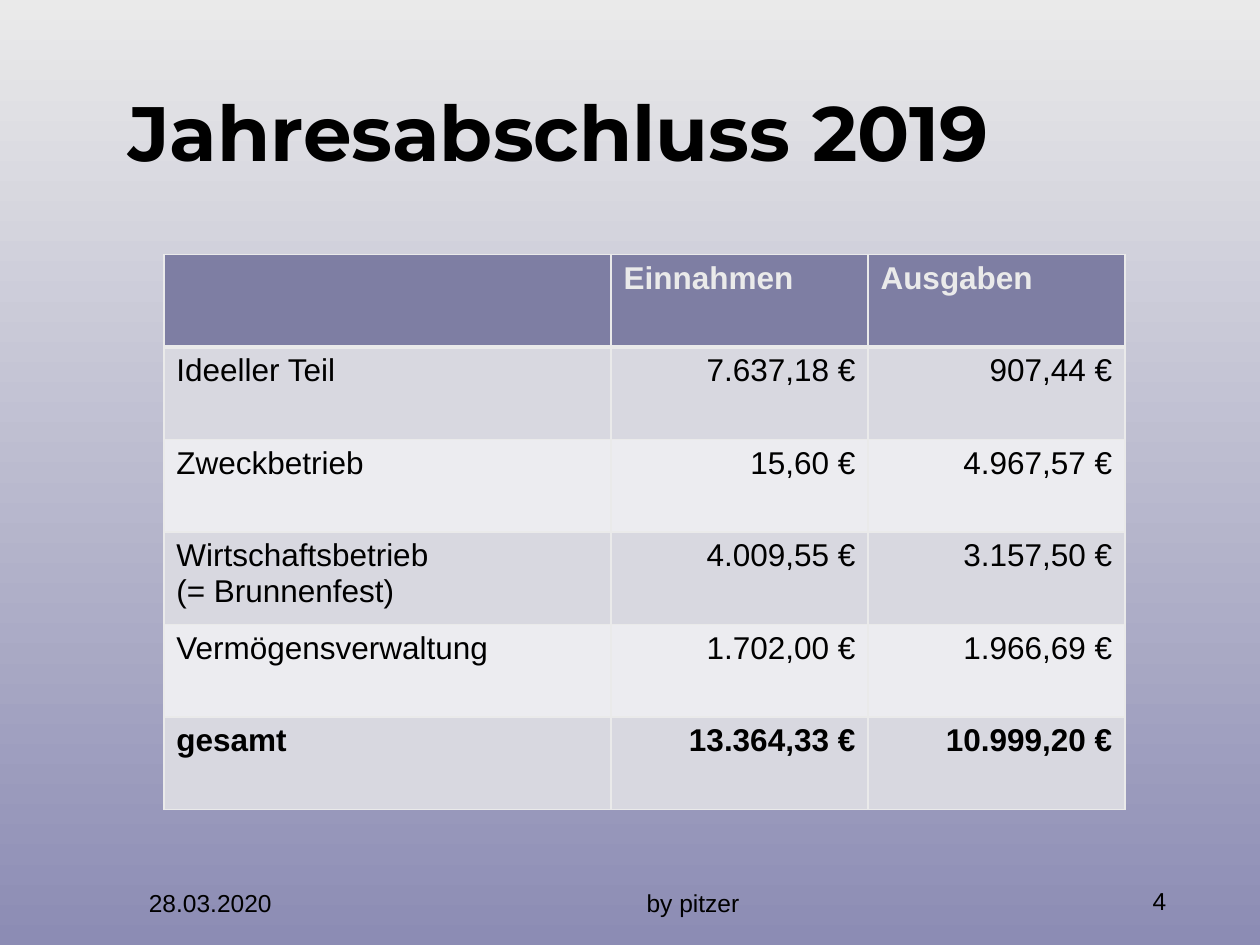
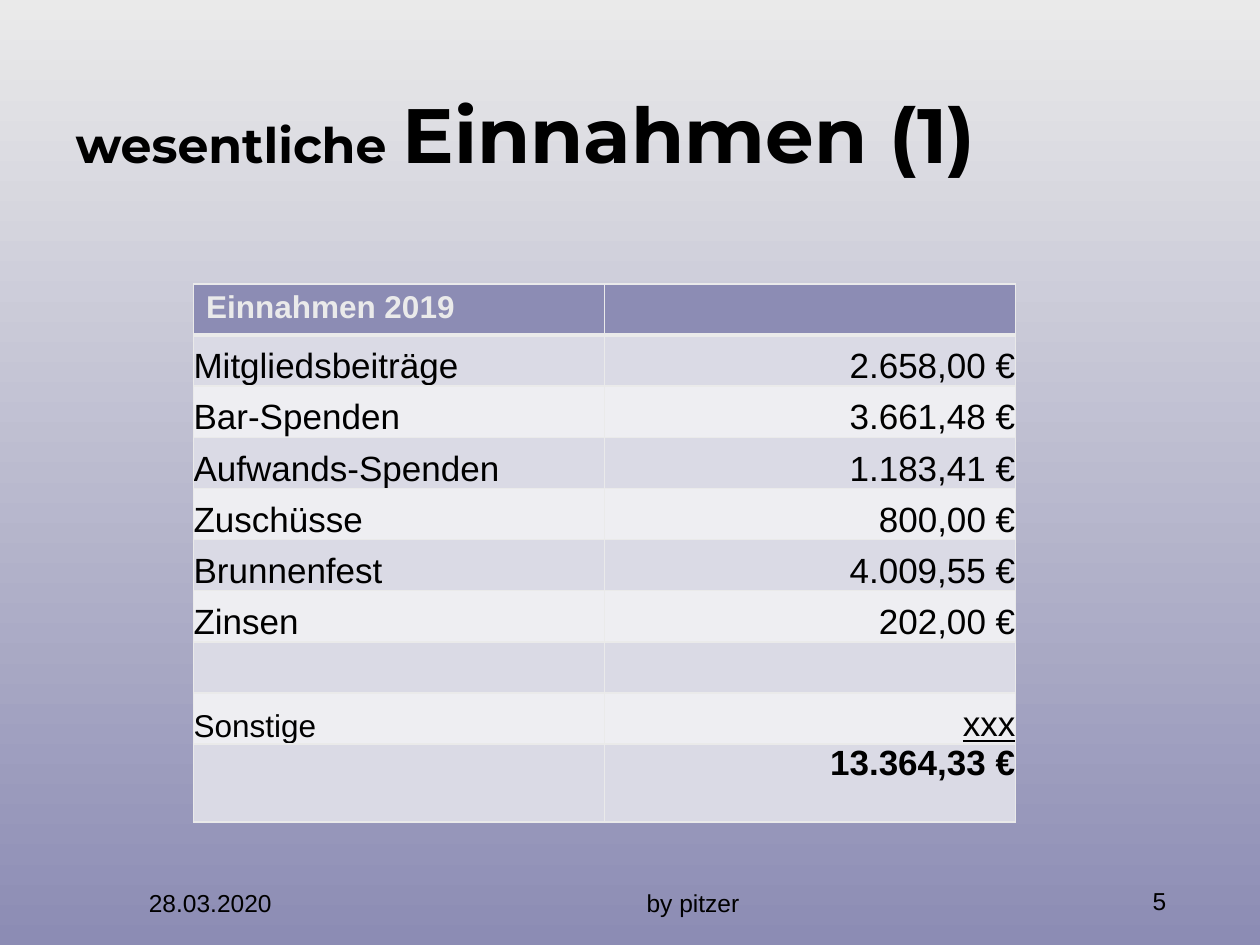
from lxml import etree
from pptx import Presentation
from pptx.dml.color import RGBColor as RGB
from pptx.enum.text import MSO_ANCHOR as Anchor, MSO_AUTO_SIZE as Fit, PP_ALIGN as Align
from pptx.oxml.ns import qn
from pptx.util import Pt

BLACK = RGB(0x00, 0x00, 0x00)
PALE = RGB(0xEA, 0xEA, 0xEA)
LILAC = RGB(0x8C, 0x8C, 0xB4)
PLUM = RGB(0x7E, 0x7E, 0xA3)
GREYS = RGB(0xD8, 0xD8, 0xE0), RGB(0xEC, 0xEC, 0xF0)
TINTS = RGB(0xDA, 0xDA, 0xE5), RGB(0xEE, 0xEE, 0xF2)

RESULT = [
    ("", "Einnahmen", "Ausgaben"),
    ("Ideeller Teil", "7.637,18 €", "907,44 €"),
    ("Zweckbetrieb", "15,60 €", "4.967,57 €"),
    ("Wirtschaftsbetrieb \v(= Brunnenfest)", "4.009,55 €", "3.157,50 €"),
    ("Vermögensverwaltung", "1.702,00 €", "1.966,69 €"),
    ("gesamt", "13.364,33 €", "10.999,20 €"),
]
INCOME = [
    ("Einnahmen 2019", ""),
    ("Mitgliedsbeiträge", "2.658,00 €"),
    ("Bar-Spenden", "3.661,48 €"),
    ("Aufwands-Spenden", "1.183,41 €"),
    ("Zuschüsse", "800,00 €"),
    ("Brunnenfest", "4.009,55 €"),
    ("Zinsen", "202,00 €"),
    ("", ""),
    ("Sonstige", "xxx"),
    ("", "13.364,33 €"),
]


def edge(cell, side, width):
    """Draw one border of a cell; side is L, R, T or B."""
    line = etree.SubElement(cell._tc.get_or_add_tcPr(), qn("a:ln" + side), w=str(Pt(width)))
    fill = etree.SubElement(line, qn("a:solidFill"))
    etree.SubElement(fill, qn("a:srgbClr"), val=str(PALE))


class Deck:
    def __init__(self):
        self.prs = Presentation()
        self.prs.slide_width, self.prs.slide_height = Pt(720), Pt(540)
        fill = self.prs.slide_master.background.fill
        fill.gradient()
        fill.gradient_angle = 270
        for stop, color, place in zip(fill.gradient_stops, (PALE, LILAC), (0, 1)):
            stop.color.rgb = color
            stop.position = place
        self.slide = None

    def font(self, para, size, color=BLACK, bold=False, name="Arial"):
        font = para.font
        font.name, font.size, font.bold = name, Pt(size), bold
        font.color.rgb = color

    def page(self, number):
        """Start a slide with its date, author and number."""
        self.slide = self.prs.slides.add_slide(self.prs.slide_layouts[5])
        self.note("28.03.2020", 78, 504, 150, Align.LEFT)
        self.note("by pitzer", 282, 504, 228, Align.CENTER)
        self.note(str(number), 523.5, 502.5, 150, Align.RIGHT)

    def note(self, text, left, top, width, align):
        box = self.slide.shapes.add_textbox(Pt(left), Pt(top), Pt(width), Pt(37.5))
        box.text_frame.word_wrap = True
        para = box.text_frame.paragraphs[0]
        para.text, para.alignment = text, align
        self.font(para, 14)

    def title(self, left, top, width, *parts):
        """Fill the title with (text, size) parts."""
        shape = self.slide.shapes.title
        shape.left, shape.top, shape.width, shape.height = map(Pt, (left, top, width, 113))
        frame = shape.text_frame
        frame.auto_size, frame.vertical_anchor = Fit.NONE, Anchor.MIDDLE
        para = frame.paragraphs[0]
        para.alignment = Align.LEFT
        self.font(para, 44, bold=True, name="Montserrat")
        for text, size in parts:
            run = para.add_run()
            run.text, run.font.size = text, Pt(size)

    def table(self, left, top, cols, high, data, head, bands, size=18, tight=False):
        """Add a table whose first row is the head and last row the total."""
        last = len(data) - 1
        grid = self.slide.shapes.add_table(
            len(data), len(cols), Pt(left), Pt(top), Pt(sum(cols)), Pt(high * len(data))).table
        grid.first_row = grid.horz_banding = False
        for col, width in zip(grid.columns, cols):
            col.width = Pt(width)
        for r, texts in enumerate(data):
            grid.rows[r].height = Pt(high)
            for c, text in enumerate(texts):
                cell = grid.cell(r, c)
                for side in "LRTB":
                    thick = (r, side) in ((0, "B"), (1, "T"))
                    edge(cell, side, 3 if thick else 1)
                cell.fill.solid()
                cell.fill.fore_color.rgb = bands[(r - 1) % 2] if r else head
                cell.text = text
                para = cell.text_frame.paragraphs[0]
                if r and c:
                    para.alignment = Align.RIGHT
                self.font(para, size if r else 18, BLACK if r else PALE, r in (0, last))
                if tight and r:
                    cell.margin_left = cell.margin_right = 0
                    cell.margin_top = cell.margin_bottom = 0
                    cell.vertical_anchor = Anchor.BOTTOM
        return grid


def main():
    deck = Deck()

    deck.page(4)
    deck.title(66, 18, 566, ("Jahresabschluss 2019", 44))
    deck.table(93.6, 145.3, (255.6, 146.8, 146.8), 52.9, RESULT, PLUM, GREYS)

    deck.page(5)
    deck.title(36, 19.5, 562, ("wesentliche", 28), (" ", 32), ("Einnahmen (1)", 44))
    grid = deck.table(110.6, 162.2, (234.8, 234.8), 29.25, INCOME, LILAC, TINTS, 20, True)
    grid.cell(8, 0).text_frame.paragraphs[0].font.size = Pt(18)
    grid.cell(8, 1).text_frame.paragraphs[0].font.underline = True
    grid.rows[9].height = Pt(44.6)
    grid.cell(9, 1).vertical_anchor = Anchor.TOP

    deck.prs.save("out.pptx")


if __name__ == "__main__":
    main()
